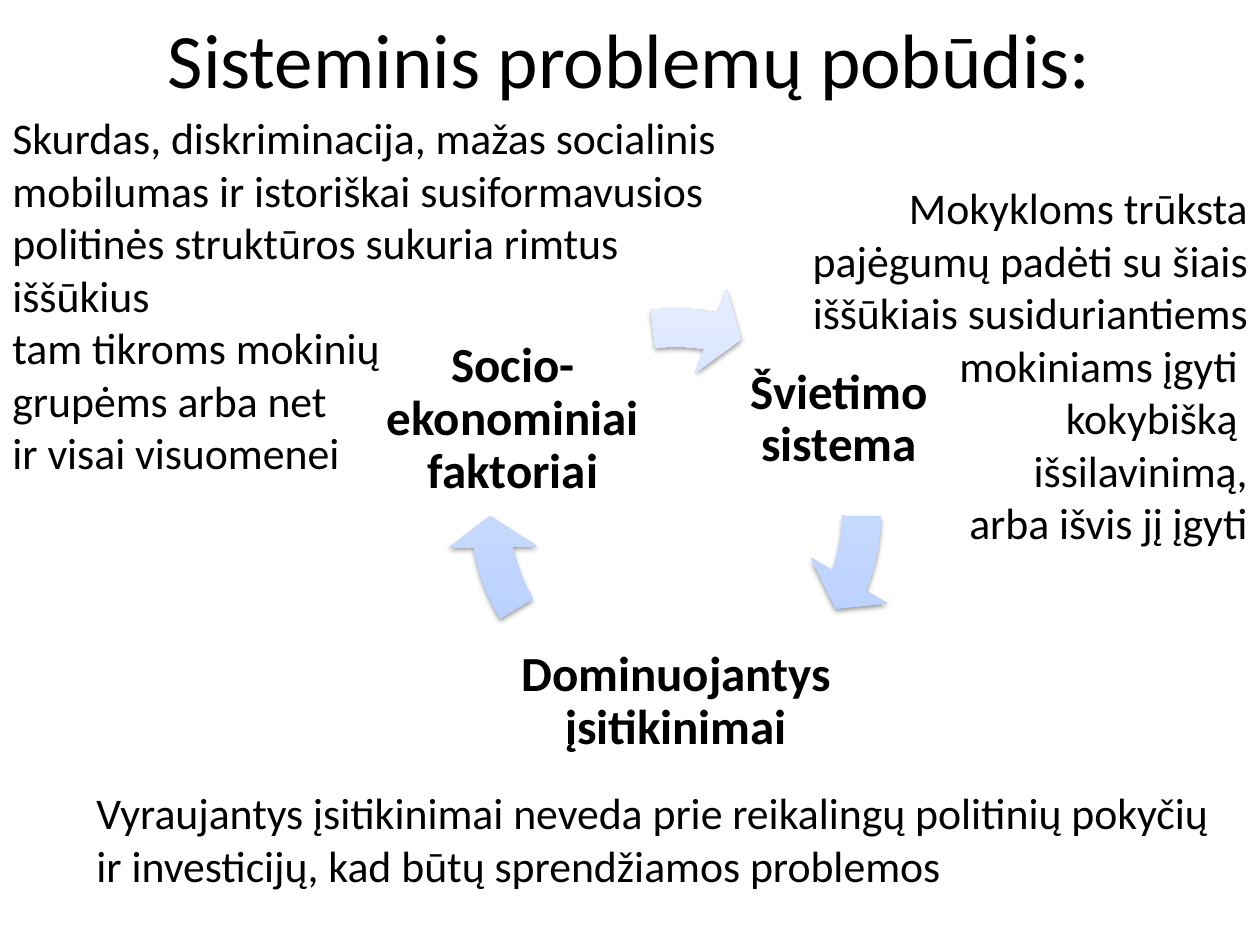
import pptx
import pptx.dml.color
import pptx.enum.shapes
import pptx.enum.text
import pptx.oxml.ns
import pptx.util
from lxml import etree

Pt = pptx.util.Pt
qn = pptx.oxml.ns.qn
ALIGN = pptx.enum.text.PP_ALIGN
ANCHOR = pptx.enum.text.MSO_ANCHOR
SHAPE = pptx.enum.shapes.MSO_SHAPE


class CycleSlide:
    font = "Calibri"
    colors = {
        "text": "000000",
        "title_fill": "FFFFFF",
        "arrow_dark": "A4C4FF",
        "arrow_mid": "BFD4FF",
        "arrow_light": "E6EEFF",
        "shadow": "000000",
    }
    arrow_stops = [(0, "arrow_dark"), (35, "arrow_mid"), (100, "arrow_light")]

    def __init__(self, prs):
        self.s = prs.slides.add_slide(prs.slide_layouts[6])

    def rgb(self, name):
        return pptx.dml.color.RGBColor.from_string(self.colors[name])

    def set_text(self, sp, text, size, align, bold=False):
        tf = sp.text_frame
        tf.word_wrap = True
        p = tf.paragraphs[0]
        p.text = text
        p.alignment = align
        p.font.name = self.font
        p.font.size = Pt(size)
        p.font.bold = bold
        p.font.color.rgb = self.rgb("text")
        return tf, p

    def box(self, bounds):
        return self.s.shapes.add_textbox(*map(Pt, bounds))

    def title(self, text, bounds):
        sp = self.s.shapes.add_shape(SHAPE.RECTANGLE, *map(Pt, bounds))
        sp.shadow.inherit = False
        sp.fill.solid()
        sp.fill.fore_color.rgb = self.rgb("title_fill")
        sp.line.fill.background()
        tf, p = self.set_text(sp, text, 44, ALIGN.CENTER)
        tf.vertical_anchor = ANCHOR.MIDDLE

    def note(self, text, bounds, align=ALIGN.LEFT):
        self.set_text(self.box(bounds), text, 25, align)

    def label(self, text, bounds):
        tf, p = self.set_text(self.box(bounds), text, 28, ALIGN.CENTER, True)
        tf.vertical_anchor = ANCHOR.MIDDLE
        tf.margin_left = tf.margin_right = tf.margin_top = tf.margin_bottom = Pt(2.8)
        p.line_spacing = 0.9

    def arrow(self, end, start):
        sp = self.s.shapes.add_shape(
            SHAPE.CIRCULAR_ARROW, Pt(254.9), Pt(162), Pt(262.8), Pt(262.8))
        for i, value in enumerate((0.083, 5.766, end, start, 0.096)):
            sp.adjustments[i] = value
        sp.line.fill.background()
        sp.fill.gradient()
        sp.fill.gradient_angle = 90
        stops = sp._element.spPr.find(".//" + qn("a:gsLst"))
        for gs in list(stops):
            stops.remove(gs)
        for position, name in self.arrow_stops:
            gs = etree.SubElement(stops, qn("a:gs"), pos=str(position * 1000))
            etree.SubElement(gs, qn("a:srgbClr"), val=self.colors[name])
        sp.shadow.inherit = False
        effects = sp._element.spPr.find(qn("a:effectLst"))
        shadow = etree.SubElement(
            effects, qn("a:outerShdw"), blurRad=str(Pt(3.1)), dist=str(Pt(1.6)),
            dir="5400000", rotWithShape="0")
        color = etree.SubElement(shadow, qn("a:srgbClr"), val=self.colors["shadow"])
        etree.SubElement(color, qn("a:alpha"), val="38000")


def main():
    prs = pptx.Presentation()
    prs.slide_width, prs.slide_height = Pt(720), Pt(540)
    slide = CycleSlide(prs)

    cycle = [
        ("Švietimo sistema", (424, 184.3, 111, 111), 12.72, 0.53),
        ("Dominuojantys įsitikinimai", (293.8, 345.6, 185, 111), 101.7, 89.51),
        ("Socio-ekonominiai faktoriai", (213.1, 184.3, 160, 111), 168.55, 157.74),
    ]
    for text, bounds, end, start in cycle:
        slide.label(text, bounds)
        slide.arrow(end, start)

    slide.title("Sisteminis problemų pobūdis:", (0, 0, 720, 66))
    slide.note(
        "Skurdas, diskriminacija, mažas socialinis mobilumas ir istoriškai "
        "susiformavusios politinės struktūros sukuria rimtus iššūkius \n"
        "tam tikroms mokinių \ngrupėms arba net \nir visai visuomenei",
        (0, 60, 417, 220))
    slide.note(
        "Vyraujantys įsitikinimai neveda prie reikalingų politinių pokyčių "
        "ir investicijų, kad būtų sprendžiamos problemos",
        (48, 445.7, 654.5, 68))
    slide.note(
        "Mokykloms trūksta pajėgumų padėti su šiais iššūkiais susiduriantiems\n"
        "mokiniams įgyti \nkokybišką \nišsilavinimą,\narba išvis jį įgyti",
        (405.4, 100, 314.6, 220), ALIGN.RIGHT)

    prs.save("out.pptx")


if __name__ == "__main__":
    main()
